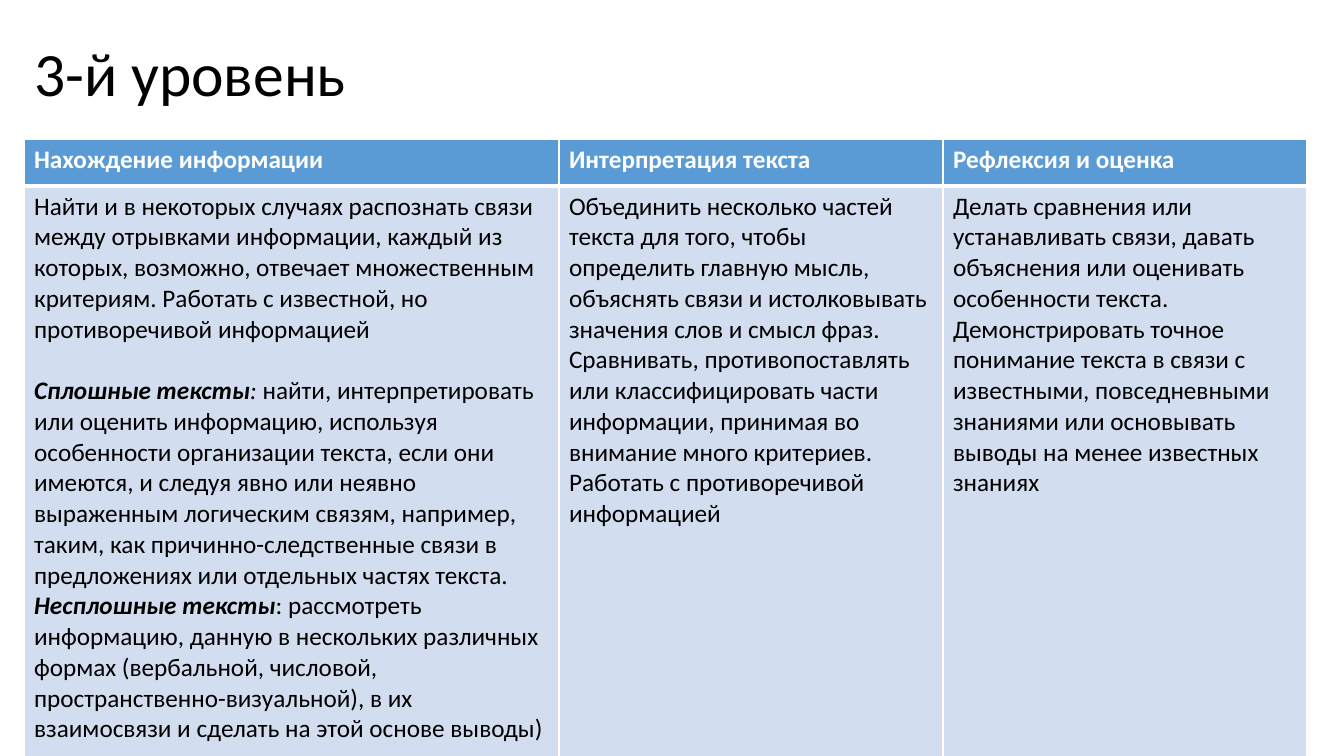
"""Build a slide with a table describing the third reading level."""
from lxml import etree
from pptx import Presentation
from pptx.dml.color import RGBColor
from pptx.enum.text import MSO_ANCHOR, MSO_AUTO_SIZE, PP_ALIGN
from pptx.oxml.ns import qn
from pptx.util import Pt

MIDDLE = MSO_ANCHOR.MIDDLE
NO_FIT = MSO_AUTO_SIZE.NONE
LEFT = PP_ALIGN.LEFT
PX = 914400 / 100.8
TITLE_ONLY = 5

THEME = {
    "font": "Calibri",
    "title_size": 44,
    "text_size": 18,
    "paragraph_gap": 22,
    "text": "000000",
    "header_text": "FFFFFF",
    "header_fill": "5B9BD5",
    "body_fill": "D2DEEF",
    "border": "FFFFFF",
}

COLUMN_WIDTHS = [535, 384, 364]
ROW_HEIGHTS = [47, 712]
PLAIN, ITALIC, STRONG = {}, {"italic": True}, {"bold": True, "italic": True}

HEADINGS = ["Нахождение информации", "Интерпретация текста", "Рефлексия и оценка"]
DESCRIPTIONS = [
    [
        [("Найти и в некоторых случаях распознать связи между отрывками информации, "
          "каждый из которых, возможно, отвечает множественным критериям. Работать "
          "с известной, но противоречивой информацией", PLAIN)],
        [("Сплошные тексты", STRONG), (": ", ITALIC),
         ("найти, интерпретировать или оценить информацию, используя особенности "
          "организации текста, если они имеются, и следуя явно или неявно выраженным "
          "логическим связям, например, таким, как причинно-следственные связи в "
          "предложениях или отдельных частях текста.", PLAIN)],
        [("Несплошные тексты", STRONG),
         (": рассмотреть информацию, данную в нескольких различных формах "
          "(вербальной, числовой, пространственно-визуальной), в их взаимосвязи и "
          "сделать на этой основе выводы)", PLAIN)],
    ],
    [[("Объединить несколько частей текста для того, чтобы определить главную мысль, "
       "объяснять связи и истолковывать значения слов и смысл фраз. Сравнивать, "
       "противопоставлять или классифицировать части информации, принимая во "
       "внимание много критериев. Работать с противоречивой информацией", PLAIN)]],
    [[("Делать сравнения или устанавливать связи, давать объяснения или оценивать "
       "особенности текста. Демонстрировать точное понимание текста в связи с "
       "известными, повседневными знаниями или основывать выводы на менее "
       "известных знаниях", PLAIN)]],
]


def px(length):
    return round(length * PX)


def add_run(paragraph, text, size, color, style):
    run = paragraph.add_run()
    run.text = text
    values = {"name": THEME["font"], "size": Pt(size), "bold": False, "italic": False}
    for name, value in (values | style).items():
        setattr(run.font, name, value)
    run.font.color.rgb = RGBColor.from_string(color)


presentation = Presentation()
presentation.slide_width, presentation.slide_height = px(1344), px(756)
slide = presentation.slides.add_slide(presentation.slide_layouts[TITLE_ONLY])

title = slide.shapes.title
title_box = {"left": 24, "top": 16, "width": 1282, "height": 122}
for name, value in title_box.items():
    setattr(title, name, px(value))
title.text_frame.auto_size = NO_FIT
title.text_frame.vertical_anchor = MIDDLE
title_paragraph = title.text_frame.paragraphs[0]
title_paragraph.alignment = LEFT
title_paragraph.line_spacing = 0.9
add_run(title_paragraph, "3-й уровень", THEME["title_size"], THEME["text"], PLAIN)

table = slide.shapes.add_table(
    len(ROW_HEIGHTS), len(COLUMN_WIDTHS), px(24), px(139),
    px(sum(COLUMN_WIDTHS)), px(sum(ROW_HEIGHTS))).table
for column, width in zip(table.columns, COLUMN_WIDTHS):
    column.width = px(width)
for row, height in zip(table.rows, ROW_HEIGHTS):
    row.height = px(height)

header_cells = [[[(heading, {"bold": True})]] for heading in HEADINGS]
row_formats = [
    (header_cells, THEME["header_fill"], THEME["header_text"], {"L": 1, "R": 1, "T": 1, "B": 3}),
    (DESCRIPTIONS, THEME["body_fill"], THEME["text"], {"L": 1, "R": 1, "T": 3, "B": 1}),
]
for row, (contents, fill, color, borders) in zip(table.rows, row_formats):
    for cell, paragraphs in zip(row.cells, contents):
        properties = cell._tc.get_or_add_tcPr()
        for side, width in borders.items():
            line = etree.SubElement(properties, qn(f"a:ln{side}"), w=str(Pt(width)))
            solid = etree.SubElement(line, qn("a:solidFill"))
            etree.SubElement(solid, qn("a:srgbClr"), val=THEME["border"])
        cell.fill.solid()
        cell.fill.fore_color.rgb = RGBColor.from_string(fill)
        for index, runs in enumerate(paragraphs):
            frame = cell.text_frame
            paragraph = frame.add_paragraph() if index else frame.paragraphs[0]
            if index == 1:
                paragraph.space_before = Pt(THEME["paragraph_gap"])
            for text, style in runs:
                add_run(paragraph, text, THEME["text_size"], color, style)

presentation.save("out.pptx")
